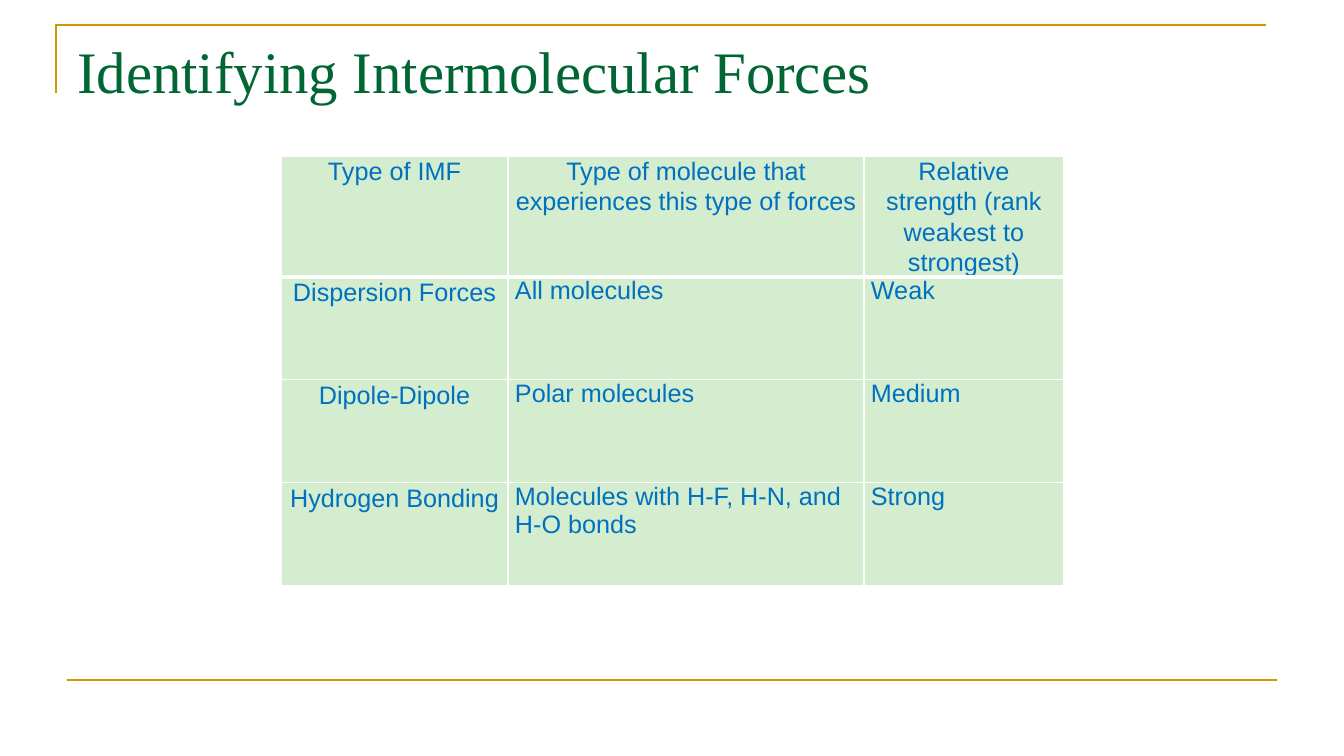
from lxml import etree
from pptx import Presentation
from pptx.dml.color import RGBColor
from pptx.enum.shapes import MSO_CONNECTOR as CONN
from pptx.enum.text import MSO_ANCHOR as ANCHOR, MSO_AUTO_SIZE as AUTO, PP_ALIGN as ALIGN
from pptx.oxml.ns import qn
from pptx.util import Emu, Pt

SCALE = 914400 / 100.8
GOLD = RGBColor(0xCC, 0x99, 0x00)
GREEN = RGBColor(0x00, 0x66, 0x33)
BLUE = RGBColor(0x00, 0x70, 0xC0)
MINT = RGBColor(0xD3, 0xED, 0xCE)
WHITE = RGBColor(0xFF, 0xFF, 0xFF)

COL_WIDTHS = [227, 356, 200]
ROW_HEIGHTS = [120, 103, 103, 103]
FORCES = [
    ["Type of IMF", "Type of molecule that experiences this type of forces",
     "Relative strength (rank weakest to strongest)"],
    ["Dispersion Forces", "All molecules", "Weak"],
    ["Dipole-Dipole", "Polar molecules", "Medium"],
    ["Hydrogen Bonding", "Molecules with H-F, H-N, and H-O bonds", "Strong"],
]


def px(n):
    return Emu(round(n * SCALE))


def write(tf, text, font="Arial", size=18, color=BLUE, align=ALIGN.LEFT, spacing=1.0):
    p = tf.paragraphs[0]
    p.alignment = align
    p.line_spacing = spacing
    r = p.add_run()
    r.text = text
    r.font.name = font
    r.font.size = Pt(size)
    r.font.color.rgb = color


def style_line(sp):
    sp.line.color.rgb = GOLD
    sp.line.width = Pt(1.5)


def add_frame(s, x, y, w, h):
    """Draw the corner line at the top left and the rule at the bottom."""
    corner = s.shapes.build_freeform(x, y + 68, scale=SCALE)
    corner.add_line_segments([(x, y), (x + w, y)], close=False)
    sp = corner.convert_to_shape()
    sp.fill.background()
    sp.shadow.inherit = False
    style_line(sp)

    left, bottom = x + 11, y + h
    rule = s.shapes.add_connector(CONN.STRAIGHT, px(left), px(bottom), px(left + w), px(bottom))
    style_line(rule)
    etree.SubElement(rule._element.spPr, qn("a:effectLst"))


def add_title(s, x, y, w, h):
    sp = s.shapes.title
    sp.left, sp.top, sp.width, sp.height = px(x), px(y), px(w), px(h)
    tf = sp.text_frame
    tf.word_wrap = True
    tf.auto_size = AUTO.NONE
    tf.vertical_anchor = ANCHOR.TOP
    write(tf, "Identifying Intermolecular Forces", font="Times New Roman", size=42, color=GREEN)


def set_borders(cell, **widths):
    """Put white borders, with widths in points by side, ahead of the cell fill."""
    tc_pr = cell._tc.get_or_add_tcPr()
    for i, side in enumerate("LRTB"):
        ln = etree.Element(qn(f"a:ln{side}"), w=str(Pt(widths.get(side, 1))))
        fill = etree.SubElement(ln, qn("a:solidFill"))
        etree.SubElement(fill, qn("a:srgbClr"), val=str(WHITE))
        tc_pr.insert(i, ln)


def add_forces_table(s, x, y):
    rows, cols = len(ROW_HEIGHTS), len(COL_WIDTHS)
    table = s.shapes.add_table(rows, cols, px(x), px(y), px(sum(COL_WIDTHS)),
                               px(sum(ROW_HEIGHTS))).table
    table.first_row = table.horz_banding = False
    for col, width in zip(table.columns, COL_WIDTHS):
        col.width = px(width)
    for i, (row, height) in enumerate(zip(table.rows, ROW_HEIGHTS)):
        row.height = px(height)
        for j, cell in enumerate(row.cells):
            cell.margin_left = cell.margin_right = px(7)
            cell.margin_top = cell.margin_bottom = 0
            cell.fill.solid()
            cell.fill.fore_color.rgb = MINT
            set_borders(cell, T=3 if i == 1 else 1, B=3 if i == 0 else 1)
            is_label = i == 0 or j == 0
            write(cell.text_frame, FORCES[i][j],
                  align=ALIGN.CENTER if is_label else ALIGN.LEFT,
                  spacing=1.07 if is_label else 1.0)


def main():
    prs = Presentation()
    prs.slide_width, prs.slide_height = px(1344), px(756)
    s = prs.slides.add_slide(prs.slide_layouts[5])
    add_frame(s, 56, 25, 1210, 655)
    add_title(s, 67, 30, 1210, 126)
    add_forces_table(s, 281, 156)
    prs.save("out.pptx")


if __name__ == "__main__":
    main()
